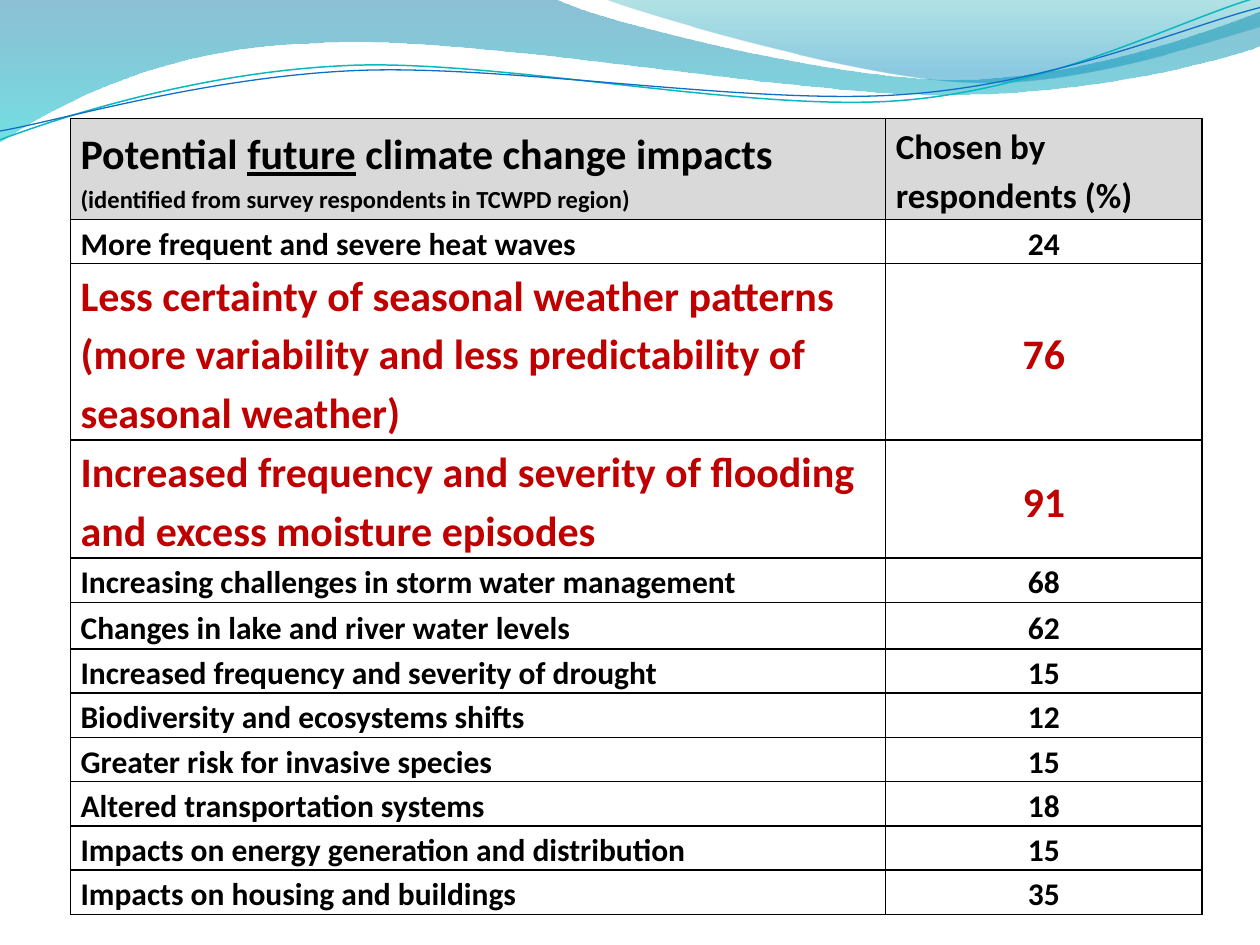
from lxml import etree
from pptx import Presentation
from pptx.dml.color import RGBColor
from pptx.enum.text import MSO_ANCHOR, PP_ALIGN
from pptx.oxml.ns import qn
from pptx.util import Inches, Pt

LEFT, CENTER = PP_ALIGN.LEFT, PP_ALIGN.CENTER
MIDDLE = MSO_ANCHOR.MIDDLE
FONT = "Calibri"
COLORS = {
    "ink": "000000", "alert": "C00000", "head": "D9D9D9",
    "deep": "0074A1", "aqua": "00C6CF", "teal": "00A1A9",
    "sky": "008BBF", "cyan": "0AB8BF", "blue": "0F6FC6",
}

BAND = [
    [(0, 0)], [(4.4, -0.01)],
    [(4.76, 0.17), (6.64, 0.63), (7.58, 0.63)],
    [(8.53, 0.63), (9.58, 0.26), (10, 0.09)], [(10.01, 0.36)],
    [(9.83, 0.44), (8.7, 0.76), (7.46, 0.75)],
    [(6.22, 0.75), (3.82, 0.28), (2.57, 0.34)],
    [(1.29, 0.36), (0.46, 0.83), (-0.01, 1.13)], [(0, 0)],
]
CREST = [
    [(4.79, -0.01)], [(5.09, 0.11), (6.82, 0.62), (7.69, 0.65)],
    [(8.56, 0.69), (9.61, 0.32), (10, 0.21)], [(10, 0)], [(4.79, -0.01)],
]
UPPER = [
    [(0, 1.11)], [(0.48, 0.93), (1.58, 0.57), (2.77, 0.52)],
    [(3.95, 0.47), (5.93, 0.89), (7.13, 0.8)],
    [(8.33, 0.71), (9.38, 0.15), (9.98, -0.02)],
]
LOWER = [
    [(0, 1.04)], [(0.47, 0.96), (1.64, 0.61), (2.83, 0.56)],
    [(4.03, 0.51), (5.97, 0.84), (7.17, 0.75)],
    [(8.36, 0.67), (9.41, 0.21), (10, 0.06)],
]

HEADER = [
    [[("Potential ", {}), ("future", {"under": True}),
      (" climate change impacts", {})],
     [("(identified from survey respondents in TCWPD region)", {"size": 14})]],
    [[("Chosen by respondents (%)", {"size": 20})]],
]
IMPACTS = [
    ("More frequent and severe heat waves", 24),
    ("Less certainty of seasonal weather patterns (more variability and "
     "less predictability of seasonal weather)", 76),
    ("Increased frequency and severity of flooding and excess moisture "
     "episodes", 91),
    ("Increasing challenges in storm water management", 68),
    ("Changes in lake and river water levels", 62),
    ("Increased frequency and severity of drought", 15),
    ("Biodiversity and ecosystems shifts", 12),
    ("Greater risk for invasive species", 15),
    ("Altered transportation systems", 18),
    ("Impacts on energy generation and distribution", 15),
    ("Impacts on housing and buildings", 35),
]
HEIGHTS = [0.8, 0.34, 0.71, 0.71, 0.34, 0.37] + [0.34] * 6
WIDTHS = [6.47, 2.51]


def rgb(name):
    return RGBColor.from_string(COLORS[name])


def write(frame, lines, align=LEFT, **base):
    for i, line in enumerate(lines):
        para = frame.paragraphs[0] if i == 0 else frame.add_paragraph()
        para.alignment = align
        para.line_spacing = 1.15
        for text, extra in line:
            form = {"size": 18, "color": "ink", "under": False, **base, **extra}
            run = para.add_run()
            run.text = text
            font = run.font
            font.name, font.bold = FONT, True
            font.size = Pt(form["size"])
            font.underline = form["under"]
            font.color.rgb = rgb(form["color"])


def bend(shape, curve):
    lines = shape._element.spPr.iter(qn("a:lnTo"))
    steps = iter(list(lines))
    for part in curve[1:]:
        group = [next(steps) for _ in part]
        if len(group) == 3:
            arc = etree.Element(qn("a:cubicBezTo"))
            group[0].addprevious(arc)
            for step in group:
                arc.append(step[0])
                step.getparent().remove(step)


class Deck:
    def __init__(self, wide, high):
        self.show = Presentation()
        self.show.slide_width = Inches(wide)
        self.show.slide_height = Inches(high)
        self.slide = self.show.slides.add_slide(self.show.slide_layouts[6])

    def outline(self, curve, close):
        first, *rest = [(Inches(x), Inches(y)) for part in curve for x, y in part]
        pen = self.slide.shapes.build_freeform(*first, scale=1.0)
        pen.add_line_segments(rest, close=close)
        shape = pen.convert_to_shape()
        bend(shape, curve)
        shape.shadow.inherit = False
        return shape

    def wave(self, curve, stops):
        shape = self.outline(curve, True)
        shape.line.fill.background()
        shape.fill.gradient()
        shape.fill.gradient_angle = 270
        for stop, (place, color, alpha) in zip(shape.fill.gradient_stops, stops):
            stop.position = place
            stop.color.rgb = rgb(color)
        tints = shape._element.spPr.iter(qn("a:srgbClr"))
        for tint, (place, color, alpha) in zip(tints, stops):
            etree.SubElement(tint, qn("a:alpha"), val=str(alpha * 1000))

    def stroke(self, curve, color, width):
        shape = self.outline(curve, False)
        shape.fill.background()
        shape.line.color.rgb = rgb(color)
        shape.line.width = Pt(width)

    def grid(self, left, top, widths, heights):
        table = self.slide.shapes.add_table(
            len(heights), len(widths), Inches(left), Inches(top),
            Inches(sum(widths)), Inches(sum(heights))).table
        table.first_row = table.horz_banding = False
        for col, width in zip(table.columns, widths):
            col.width = Inches(width)
        for row, height in zip(table.rows, heights):
            row.height = Inches(height)
        return table

    def cell(self, cell, lines, fill=None, **form):
        cell.margin_left = cell.margin_right = Inches(0.08)
        cell.margin_top = cell.margin_bottom = 0
        cell.vertical_anchor = MIDDLE
        props = cell._tc.get_or_add_tcPr()
        for side in ("lnL", "lnR", "lnT", "lnB"):
            edge = etree.SubElement(props, qn("a:" + side), w=str(Pt(1)))
            solid = etree.SubElement(edge, qn("a:solidFill"))
            etree.SubElement(solid, qn("a:srgbClr"), val=COLORS["ink"])
        if fill:
            cell.fill.solid()
            cell.fill.fore_color.rgb = rgb(fill)
        else:
            cell.fill.background()
        write(cell.text_frame, lines, **form)


def main():
    deck = Deck(10, 7.5)
    deck.wave(BAND, [(0, "deep", 45), (1, "aqua", 55)])
    deck.wave(CREST, [(0, "teal", 30), (0.8, "sky", 45)])
    deck.stroke(UPPER, "cyan", 0.85)
    deck.stroke(LOWER, "blue", 0.75)

    table = deck.grid(0.56, 0.94, WIDTHS, HEIGHTS)
    for col, lines in enumerate(HEADER):
        deck.cell(table.cell(0, col), lines, fill="head", size=24)
    for row, (impact, share) in enumerate(IMPACTS, 1):
        form = {"size": 24, "color": "alert"} if share > 70 else {}
        deck.cell(table.cell(row, 0), [[(impact, {})]], **form)
        deck.cell(table.cell(row, 1), [[(str(share), {})]], align=CENTER, **form)
    deck.show.save("out.pptx")


if __name__ == "__main__":
    main()
